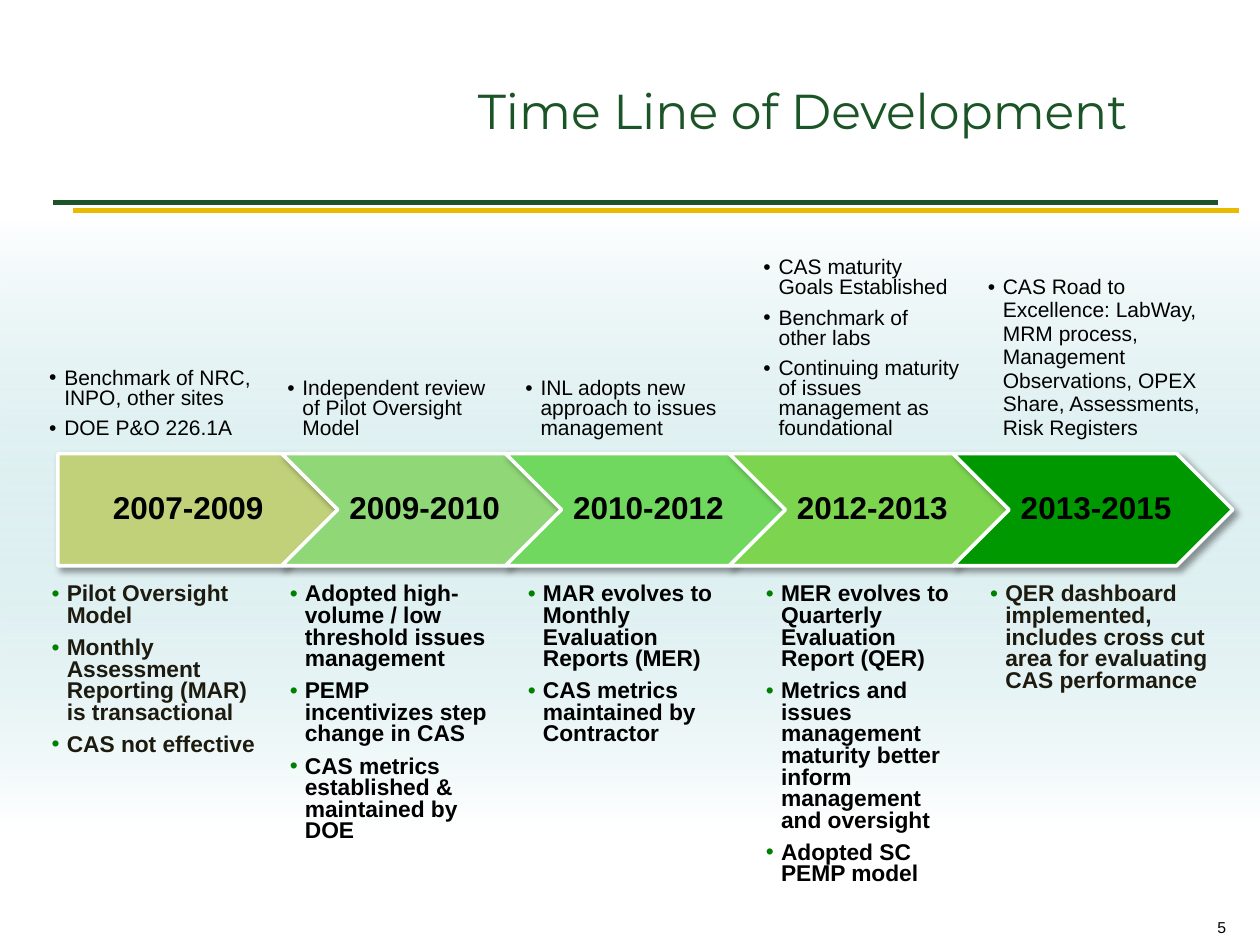
from dataclasses import dataclass
from typing import Any

from lxml import etree
from pptx import Presentation
from pptx.dml.color import RGBColor
from pptx.enum.shapes import MSO_CONNECTOR, MSO_SHAPE
from pptx.enum.text import MSO_ANCHOR, PP_ALIGN
from pptx.oxml import parse_xml
from pptx.oxml.ns import qn
from pptx.util import Emu, Inches, Pt

STRAIGHT = MSO_CONNECTOR.STRAIGHT
RECTANGLE, PENTAGON, CHEVRON = MSO_SHAPE.RECTANGLE, MSO_SHAPE.PENTAGON, MSO_SHAPE.CHEVRON
TOP, MIDDLE, BOTTOM = MSO_ANCHOR.TOP, MSO_ANCHOR.MIDDLE, MSO_ANCHOR.BOTTOM
LEFT, CENTER, RIGHT = PP_ALIGN.LEFT, PP_ALIGN.CENTER, PP_ALIGN.RIGHT

BLACK = RGBColor(0, 0, 0)
WHITE = RGBColor(255, 255, 255)
DARK_GREEN = RGBColor(0x1B, 0x55, 0x27)
GOLD = RGBColor(0xE8, 0xBB, 0x00)
BROWN = RGBColor(0x1D, 0x1B, 0x10)
BULLET_GREEN = RGBColor(0x00, 0x80, 0x00)
MIST = RGBColor(0xBB, 0xE0, 0xE3)

WIDTH, HEIGHT = Inches(10), Inches(7.5)
GRID_COLUMNS, GRID_ROWS = 100, 75
COLUMN_WIDTHS = (18.9, 18.9, 18.9, 17.8, 19.9)
ARROW_LEFT, ARROW_TOP, ARROW_WIDTH, ARROW_HEIGHT = 4.6, 36, 22.2, 8.9
ARROW_STEP = ARROW_WIDTH * 0.8
NO_STYLE = "{2D5ABB26-0587-4C30-8999-92F81FD0307C}"
DRAWING_NS = "http://schemas.openxmlformats.org/drawingml/2006/main"


@dataclass(frozen=True)
class Period:
    years: str
    color: RGBColor
    context: tuple[str, ...]
    results: tuple[str, ...]
    result_color: RGBColor = BLACK
    context_spacing: float = 0.85


@dataclass(frozen=True)
class Rule:
    left: float
    top: float
    color: RGBColor


PERIODS = (
    Period("2007-2009", RGBColor(0xC1, 0xD1, 0x7A),
           ("Benchmark of NRC, INPO, other sites", "DOE P&O 226.1A"),
           ("Pilot Oversight Model",
            "Monthly Assessment Reporting (MAR) is transactional",
            "CAS not effective"), BROWN),
    Period("2009-2010", RGBColor(0x8F, 0xD7, 0x77),
           ("Independent review of Pilot Oversight Model",),
           ("Adopted high-volume / low threshold issues management",
            "PEMP incentivizes step change in CAS",
            "CAS metrics established & maintained by DOE")),
    Period("2010-2012", RGBColor(0x70, 0xD8, 0x5E),
           ("INL adopts new approach to issues management",),
           ("MAR evolves to Monthly Evaluation Reports (MER)",
            "CAS metrics maintained by Contractor")),
    Period("2012-2013", RGBColor(0x7D, 0xD4, 0x4F),
           ("CAS maturity Goals Established",
            "Benchmark of\vother labs",
            "Continuing maturity of issues management as foundational"),
           ("MER evolves to Quarterly Evaluation Report (QER)",
            "Metrics and issues management maturity better inform management and oversight",
            "Adopted SC PEMP model")),
    Period("2013-2015", RGBColor(0x00, 0x98, 0x00),
           ("CAS Road to Excellence: LabWay, MRM process, Management "
            "Observations, OPEX Share, Assessments, Risk Registers",),
           ("QER dashboard implemented, includes cross cut area for "
            "evaluating CAS performance",), BROWN, 1.0),
)
RULES = (Rule(4.2, 16.1, DARK_GREEN), Rule(5.8, 16.7, GOLD))


def col(count: float) -> Emu:
    return Emu(round(WIDTH * count / GRID_COLUMNS))


def row(count: float) -> Emu:
    return Emu(round(HEIGHT * count / GRID_ROWS))


def area(left: float, top: float, width: float, height: float) -> tuple[Emu, ...]:
    return col(left), row(top), col(width), row(height)


def write(frame: Any, *lines: str, size: float, color: RGBColor = BLACK,
          font: str = "Arial", bold: bool = False, align: Any = LEFT,
          spacing: float = 1.0, bullet: RGBColor | None = None) -> None:
    frame.word_wrap = True
    for index, line in enumerate(lines):
        paragraph = frame.paragraphs[0] if index == 0 else frame.add_paragraph()
        paragraph.text = line
        if bullet is not None:
            add_bullet(paragraph, bullet)
        paragraph.alignment = align
        paragraph.line_spacing = spacing
        if index:
            paragraph.space_before = Pt(6)
        for run in paragraph.runs:
            run.font.name, run.font.size = font, Pt(size)
            run.font.bold, run.font.color.rgb = bold, color


def add_bullet(paragraph: Any, color: RGBColor) -> None:
    properties = paragraph._p.get_or_add_pPr()
    properties.set("marL", str(col(1.2)))
    properties.set("indent", str(-col(1.2)))
    bullet_color = etree.SubElement(properties, qn("a:buClr"))
    etree.SubElement(bullet_color, qn("a:srgbClr"), val=str(color))
    etree.SubElement(properties, qn("a:buFont"), typeface="Arial")
    etree.SubElement(properties, qn("a:buChar"), char="•")


def draw_rule(slide: Any, rule: Rule) -> None:
    line = slide.shapes.add_connector(
        STRAIGHT, col(rule.left), row(rule.top), col(rule.left + 92.5), row(rule.top))
    line.line.color.rgb = rule.color
    line.line.width = Pt(3)
    etree.SubElement(line._element.spPr, qn("a:effectLst"))


def draw_backdrop(slide: Any) -> None:
    backdrop = slide.shapes.add_shape(RECTANGLE, *area(0, 17.2, 100, 48.4))
    backdrop.shadow.inherit = False
    backdrop.line.fill.background()
    backdrop.fill.background()
    properties = backdrop._element.spPr
    stops = "".join(
        f'<a:gs pos="{position}"><a:srgbClr val="{color}"><a:alpha val="{alpha}"/>'
        "</a:srgbClr></a:gs>"
        for position, color, alpha in (
            (0, WHITE, 100000), (50000, MIST, 47000), (100000, WHITE, 100000)))
    properties.replace(properties.find(qn("a:noFill")), parse_xml(
        f'<a:gradFill xmlns:a="{DRAWING_NS}" rotWithShape="1"><a:gsLst>{stops}</a:gsLst>'
        '<a:lin ang="5400000" scaled="0"/></a:gradFill>'))


def draw_arrow(slide: Any, index: int, period: Period) -> None:
    arrow = slide.shapes.add_shape(
        CHEVRON if index else PENTAGON,
        *area(ARROW_LEFT + index * ARROW_STEP, ARROW_TOP, ARROW_WIDTH, ARROW_HEIGHT))
    arrow.fill.solid()
    arrow.fill.fore_color.rgb = period.color
    arrow.line.color.rgb = WHITE
    arrow.line.width = Pt(2)
    arrow.shadow.inherit = False
    effects = arrow._element.spPr.find(qn("a:effectLst"))
    shadow = etree.SubElement(
        effects, qn("a:outerShdw"), blurRad=str(Pt(4)), dist=str(Pt(3)),
        dir="2700000", rotWithShape="0")
    shade = etree.SubElement(shadow, qn("a:srgbClr"), val=str(BLACK))
    etree.SubElement(shade, qn("a:alpha"), val="40000")
    frame = arrow.text_frame
    frame.vertical_anchor = MIDDLE
    frame.margin_left = col(0.8 if index else 1)
    frame.margin_right = col(0.3)
    write(frame, period.years, size=18, bold=True, align=CENTER, spacing=0.9)


def add_period_table(slide: Any, left: float, top: float, height: float,
                     anchor: Any) -> Any:
    table = slide.shapes.add_table(
        1, len(PERIODS), *area(left, top, sum(COLUMN_WIDTHS), height)).table
    table.first_row = table.horz_banding = False
    table._tbl.tblPr.find(qn("a:tableStyleId")).text = NO_STYLE
    for column, width in zip(table.columns, COLUMN_WIDTHS):
        column.width = col(width)
    for cell in table.iter_cells():
        cell.fill.background()
        cell.vertical_anchor = anchor
    return table


def add_label(slide: Any, box: tuple[Emu, ...], text: str, **style: Any) -> None:
    frame = slide.shapes.add_textbox(*box).text_frame
    frame.vertical_anchor = MIDDLE
    write(frame, text, **style)


def main() -> None:
    deck = Presentation()
    deck.slide_width, deck.slide_height = WIDTH, HEIGHT
    slide = deck.slides.add_slide(deck.slide_layouts[6])
    for rule in RULES:
        draw_rule(slide, rule)
    add_label(slide, area(78.3, 72.3, 20, 2.5), "5", size=9, align=RIGHT)
    draw_backdrop(slide)
    for index, period in enumerate(PERIODS):
        draw_arrow(slide, index, period)
    add_label(slide, area(30.8, 4.1, 65.8, 10), "Time Line of Development", size=28,
              color=DARK_GREEN, font="Montserrat", align=CENTER, spacing=0.85)
    context_table = add_period_table(slide, 2.9, 18.5, 16.9, BOTTOM)
    result_table = add_period_table(slide, 3.1, 45.9, 22.8, TOP)
    for index, period in enumerate(PERIODS):
        write(context_table.cell(0, index).text_frame, *period.context, size=12,
              spacing=period.context_spacing, bullet=BLACK)
        write(result_table.cell(0, index).text_frame, *period.results, size=13,
              color=period.result_color, bold=True, spacing=0.85, bullet=BULLET_GREEN)
    deck.save("out.pptx")


if __name__ == "__main__":
    main()
